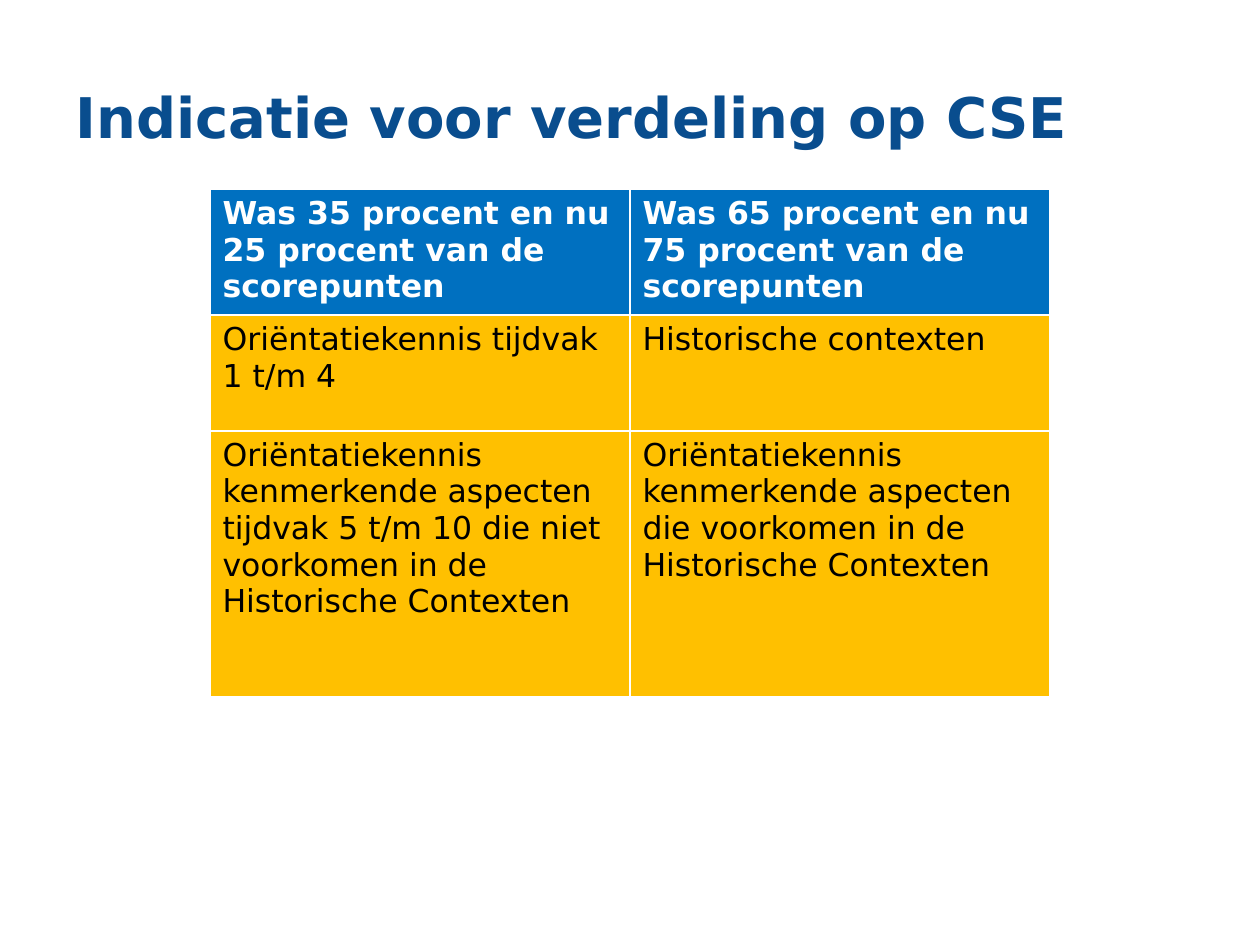
from pptx import Presentation
from pptx.dml.color import RGBColor
from pptx.enum.text import MSO_ANCHOR
from pptx.util import Inches, Pt

MIDDLE = MSO_ANCHOR.MIDDLE
FONT = "DejaVu Sans"
NAVY, BLUE, AMBER = "094D8E", "0070C0", "FFC000"
WHITE, BLACK = "FFFFFF", "000000"

ROWS = [
    ("Was 35 procent en nu 25 procent van de scorepunten",
     "Was 65 procent en nu 75 procent van de scorepunten"),
    ("Oriëntatiekennis tijdvak 1 t/m 4",
     "Historische contexten"),
    ("Oriëntatiekennis kenmerkende aspecten tijdvak 5 t/m 10 "
     "die niet voorkomen in de Historische Contexten",
     "Oriëntatiekennis kenmerkende aspecten die voorkomen "
     "in de Historische Contexten"),
]
HEIGHTS = [0.97, 0.92, 2.11]


def color(code):
    return RGBColor.from_string(code)


class Deck:
    def __init__(self, wide, high):
        self.prs = Presentation()
        self.prs.slide_width = Inches(wide)
        self.prs.slide_height = Inches(high)
        self.slide = self.prs.slides.add_slide(self.prs.slide_layouts[6])

    def place(self, left, top, width, height):
        """Turn shares of the slide's size into lengths."""
        wide, high = self.prs.slide_width, self.prs.slide_height
        return (int(left * wide), int(top * high),
                int(width * wide), int(height * high))

    def label(self, frame, text, size, code, bold):
        frame.word_wrap = True
        frame.text = text
        font = frame.paragraphs[0].runs[0].font
        font.name, font.size, font.bold = FONT, Pt(size), bold
        font.color.rgb = color(code)

    def title(self, text, *area):
        frame = self.slide.shapes.add_textbox(*self.place(*area)).text_frame
        self.label(frame, text, 32, NAVY, True)
        frame.vertical_anchor = MIDDLE

    def table(self, rows, heights, left, top, width):
        """Add a table whose first row is the header; heights are in inches."""
        area = self.place(left, top, width, 0.5)
        table = self.slide.shapes.add_table(len(rows), len(rows[0]), *area).table
        table.horz_banding = False
        for r, (texts, height) in enumerate(zip(rows, heights)):
            head = r == 0
            table.rows[r].height = Inches(height)
            for c, text in enumerate(texts):
                cell = table.cell(r, c)
                cell.fill.solid()
                cell.fill.fore_color.rgb = color(BLUE if head else AMBER)
                self.label(cell.text_frame, text, 18,
                           WHITE if head else BLACK, head)


def main():
    deck = Deck(10, 7.5)
    deck.title("Indicatie voor verdeling op CSE", 0.05, 0.04, 0.9, 1 / 6)
    deck.table(ROWS, HEIGHTS, 1 / 6, 0.2, 2 / 3)
    deck.prs.save("out.pptx")


if __name__ == "__main__":
    main()
